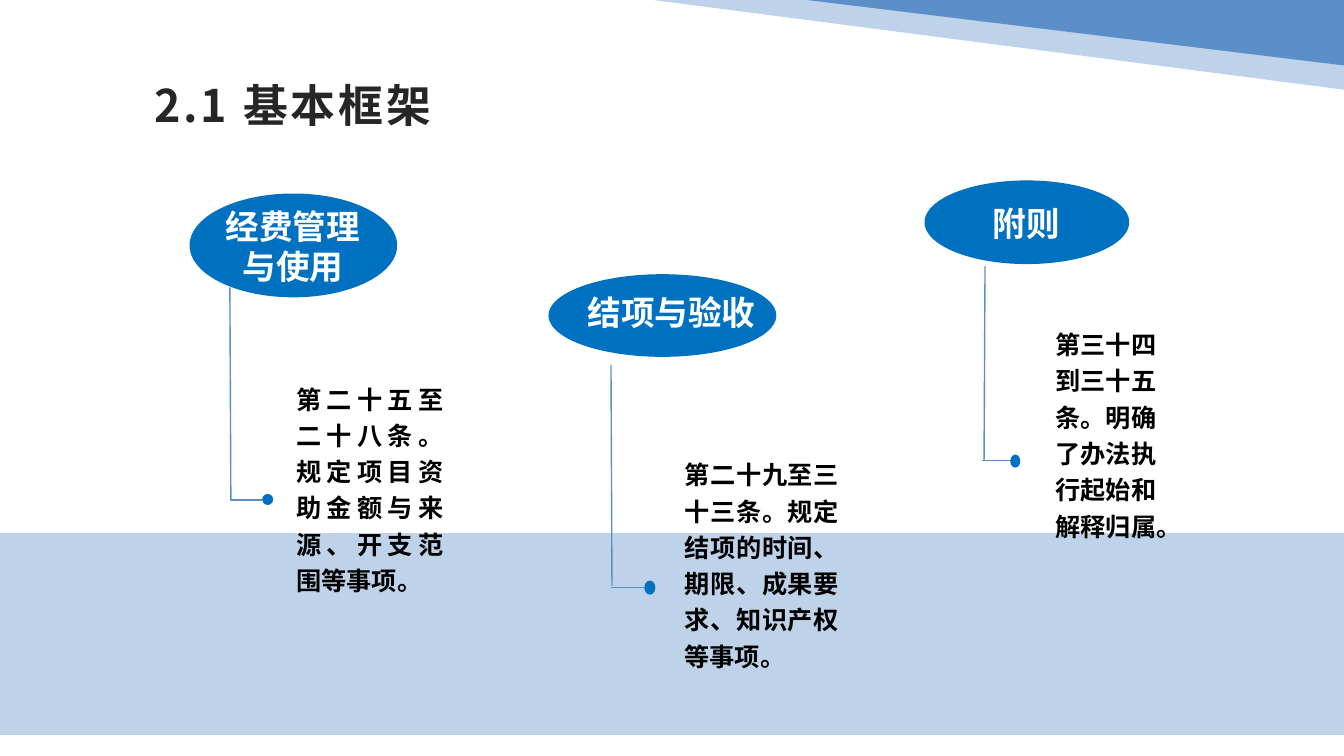
import pptx
import pptx.util
import pptx.dml.color
import pptx.enum.shapes
import pptx.enum.text
import pptx.oxml.ns
from lxml import etree

SCALE = 9144
FONT = "Noto Sans CJK SC"
COLORS = {"pale": "BED2E9", "mid": "5C8FC7", "strong": "0071C1",
          "title": "262626", "white": "FFFFFF", "black": "000000"}
SHAPES = pptx.enum.shapes.MSO_SHAPE
ALIGN = pptx.enum.text.PP_ALIGN
AUTO_SIZE = pptx.enum.text.MSO_AUTO_SIZE


def px(*lengths):
    return [pptx.util.Emu(length * SCALE) for length in lengths]


def color(name):
    return pptx.dml.color.RGBColor.from_string(COLORS[name])


def write(frame, text, size=18, ink="black", align=ALIGN.LEFT, line_spacing=None, tracking=None):
    frame.word_wrap = True
    paragraph = frame.paragraphs[0]
    paragraph.alignment = align
    if line_spacing:
        paragraph.line_spacing = line_spacing
    words = paragraph.add_run()
    words.text = text
    words.font.size = pptx.util.Pt(size)
    words.font.bold = True
    words.font.name = FONT
    words.font.color.rgb = color(ink)
    properties = words.font._element
    etree.SubElement(properties, pptx.oxml.ns.qn("a:ea"), typeface=FONT)
    if tracking:
        properties.set("spc", str(tracking * 100))


class FrameworkSlide:
    def __init__(self, deck):
        self.slide = deck.slides.add_slide(deck.slide_layouts[5])
        self.shapes = self.slide.shapes

    def paint(self, shape, fill):
        shape.shadow.inherit = False
        shape.fill.solid()
        shape.fill.fore_color.rgb = color(fill)
        shape.line.fill.background()
        return shape

    def shape(self, kind, box, fill):
        return self.paint(self.shapes.add_shape(kind, *px(*box)), fill)

    def polygon(self, points, fill):
        outline = self.shapes.build_freeform(*points[0], scale=SCALE)
        outline.add_line_segments(points[1:], close=True)
        return self.paint(outline.convert_to_shape(), fill)

    def line(self, start, end):
        connector = self.shapes.add_connector(
            pptx.enum.shapes.MSO_CONNECTOR.STRAIGHT, *px(*start, *end))
        connector.line.color.rgb = color("mid")
        connector.line.width = pptx.util.Pt(1)
        etree.SubElement(connector._element.spPr, pptx.oxml.ns.qn("a:effectLst"))

    def text(self, box, text, **style):
        frame = self.shapes.add_textbox(*px(*box)).text_frame
        write(frame, text, **style)
        frame.auto_size = AUTO_SIZE.SHAPE_TO_FIT_TEXT

    def title(self, box, text):
        heading = self.shapes.title
        heading.left, heading.top, heading.width, heading.height = px(*box)
        frame = heading.text_frame
        frame.margin_left, frame.margin_top, frame.margin_right, frame.margin_bottom = px(11, 4, 8, 4)
        frame.vertical_anchor = pptx.enum.text.MSO_ANCHOR.MIDDLE
        frame.auto_size = AUTO_SIZE.NONE
        write(frame, text, size=32, ink="title", tracking=2)

    def chapter(self, oval, name_box, name, stem, branch, dot, detail_box, detail, align):
        self.shape(SHAPES.OVAL, oval, "strong")
        self.text(name_box, name, size=24, ink="white", align=ALIGN.CENTER)
        self.line(*stem)
        self.line(*branch)
        self.shape(SHAPES.OVAL, dot, "strong")
        self.text(detail_box, detail, align=align, line_spacing=1.2)


CHAPTERS = [
    dict(oval=(188, 192, 206, 103), name_box=(206, 199, 169, 91), name="经费管理与使用",
         stem=((228, 285), (229, 496)), branch=((228, 496), (260, 496)), dot=(260, 490, 11, 11),
         detail_box=(284, 370, 166, 228), align=ALIGN.JUSTIFY,
         detail="第二十五至二十八条。规定项目资助金额与来源、开支范围等事项。"),
    dict(oval=(544, 272, 226, 82), name_box=(563, 285, 206, 50), name="结项与验收",
         stem=((606, 362), (607, 581)), branch=((606, 583), (639, 583)), dot=(639, 576, 11, 14),
         detail_box=(669, 445, 173, 228), align=ALIGN.JUSTIFY,
         detail="第二十九至三十三条。规定结项的时间、期限、成果要求、知识产权等事项。"),
    dict(oval=(917, 179, 203, 83), name_box=(902, 196, 232, 50), name="附则",
         stem=((977, 264), (976, 457)), branch=((974, 457), (1006, 457)), dot=(1002, 451, 10, 13),
         detail_box=(1037, 316, 136, 228), align=ALIGN.LEFT,
         detail="第三十四到三十五条。明确了办法执行起始和解释归属。"),
]


def main():
    deck = pptx.Presentation()
    deck.slide_width, deck.slide_height = px(1333, 750)
    framework = FrameworkSlide(deck)
    framework.polygon([(1333, 89), (1333, 6), (1000, 0), (648, 0)], "pale")
    corner = framework.shape(SHAPES.ISOSCELES_TRIANGLE, (800, 0, 533, 65), "mid")
    corner.adjustments[0] = 1
    corner._element.spPr.xfrm.set("flipV", "1")
    framework.shape(SHAPES.RECTANGLE, (0, 529, 1333, 200), "pale")
    framework.title((142, 65, 1139, 78), "2.1 基本框架")
    for chapter in CHAPTERS:
        framework.chapter(**chapter)
    deck.save("out.pptx")


if __name__ == "__main__":
    main()
